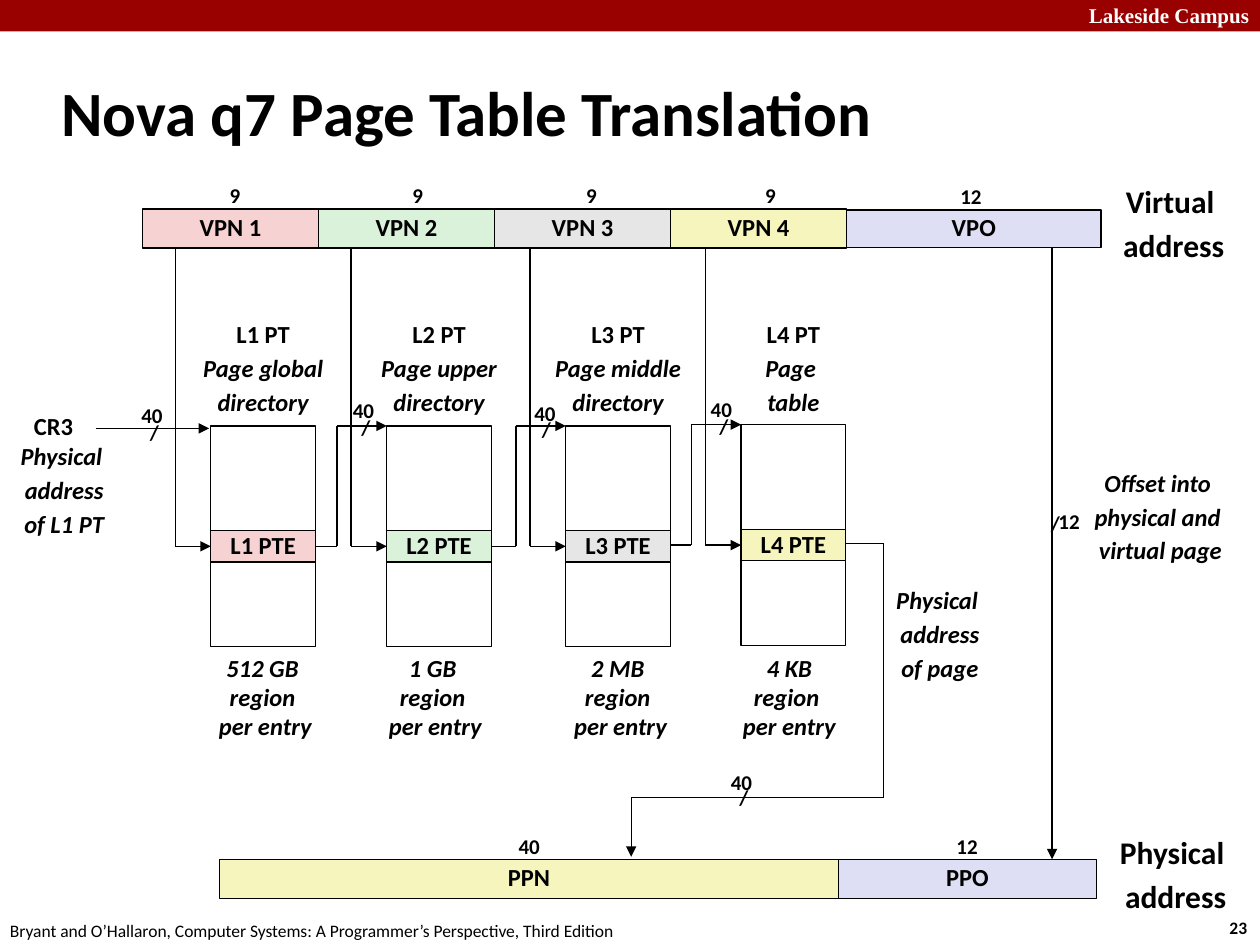
from pptx import Presentation
from pptx.util import Pt
from pptx.dml.color import RGBColor as Rgb
from pptx.enum.shapes import MSO_SHAPE as Kind, MSO_CONNECTOR as Link
from pptx.enum.text import PP_ALIGN as Align, MSO_ANCHOR as Anchor
from pptx.oxml.ns import qn
from lxml.etree import SubElement as Sub

# Content: all lengths in points
HUE = dict(red="990000", pink="F6D2D2", green="DBF2DA", gray="E6E6E6",
           yellow="F6F5BD", blue="DEDFF5", white="FFFFFF", black="000000")
TITLE = "Nova q7 Page Table Translation"
SCHOOL = "Lakeside Campus"
BOOK = ("Bryant and O’Hallaron, Computer Systems: "
        "A Programmer’s Perspective, Third Edition")
PAGE = "23"

# left, top of table, fill, name, size of region, centres of region and 9
LEVELS = [
    (120.5, 243.4, "pink", ["Page global", "directory"], "512 GB ", 151.6, 134.3),
    (221, 243.4, "green", ["Page upper", "directory"], "1 GB ", 248.8, 238.7),
    (323.3, 243.4, "gray", ["Page middle", "directory"], "2 MB ", 354.6, 338),
    (423.5, 242.7, "yellow", ["Page ", "table"], "4 KB", 451.1, 440.3),
]
# left, top, width, height, fill, text
FIELDS = [
    (483.8, 120, 145.4, 21.6, "blue", "VPO"),
    (125.3, 491, 354, 22.3, "yellow", "PPN"),
    (479, 491, 147.6, 22.3, "blue", "PPO"),
]
# centre, top, lines, size, italic
NOTES = [
    (30.6, 233.3, ["CR3"], 14, False),
    (36.7, 250.6, ["Physical ", "address", "of L1 PT"], 14, True),
    (537.1, 332.6, ["Physical ", "address", "of page"], 14, True),
    (663.1, 265.7, ["Offset into ", "physical and ", "virtual page"], 14, True),
    (670.7, 103, ["Virtual ", "address"], 18, False),
    (671.8, 475.2, ["Physical ", "address"], 18, False),
    (554.8, 103, ["12"], 12, False),
    (302.4, 474.5, ["40"], 12, False),
    (552.6, 474.5, ["12"], 12, False),
]
# label and slash: centre, top of each
WIDTHS = [
    ("40", 86.8, 228.2, 88.2, 236.2),
    ("40", 207.7, 225.4, 209.1, 233.3),
    ("40", 311.4, 226.8, 312.2, 234.7),
    ("40", 412.2, 224.6, 413.6, 232.6),
    ("40", 423.7, 437.8, 425.1, 445),
    ("12", 610.9, 288.7, 603, 288),
]
# points of each path, which ends in an arrow
PATHS = [
    [(54.7, 244.8), (119.5, 244.8)],
    [(601.2, 141.8), (601.2, 491)],
    [(483.5, 310.5), (504.7, 310.5), (504.7, 455.8), (360.7, 455.8),
     (360.7, 489.6)],
]
VPN_X, VPN_W = 81.4, 100.6
TAB_W, TAB_H, PTE_H, PTE_DY = 59.8, 126, 18, 59.8

deck = Presentation()
deck.slide_width, deck.slide_height = Pt(720), Pt(540)
slide = deck.slides.add_slide(deck.slide_layouts[6])
parts = slide.shapes


def color(key):
    return Rgb.from_string(HUE[key])


def write(frame, lines, size, ital=False, lead=0.9, align=Align.CENTER,
          hue="black", font="Calibri", bold=True):
    """Fill a frame; each line is a text, or a (text, italic) pair."""
    frame.word_wrap = False
    for i, line in enumerate(lines):
        text, slant = line if isinstance(line, tuple) else (line, ital)
        para = frame.paragraphs[0] if i == 0 else frame.add_paragraph()
        para.alignment, para.line_spacing = align, lead
        para.space_before = Pt(0.3 * size if i and lead < 1 else 0)
        run = para.add_run()
        run.text = text
        face = run.font
        face.name, face.size = font, Pt(size)
        face.bold, face.italic = bold, slant
        face.color.rgb = color(hue)


def label(x, y, w, h, lines, size, **style):
    frame = parts.add_textbox(Pt(x), Pt(y), Pt(w), Pt(h)).text_frame
    write(frame, lines, size, **style)
    return frame


def note(mid, top, lines, size, ital=False, lead=0.9):
    tall = 7.2 + len(lines) * size * 1.1 + (len(lines) - 1) * size * 0.3
    label(mid - 45, top, 90, tall, lines, size, ital=ital, lead=lead)


def box(x, y, w, h, fill, text=None, edge=True):
    shape = parts.add_shape(Kind.RECTANGLE, Pt(x), Pt(y), Pt(w), Pt(h))
    shape.shadow.inherit = False
    shape.fill.solid()
    shape.fill.fore_color.rgb = color(fill)
    if edge:
        shape.line.color.rgb = color("black")
        shape.line.width = Pt(0.75)
    else:
        shape.line.fill.background()
    if text:
        shape.text_frame.vertical_anchor = Anchor.MIDDLE
        write(shape.text_frame, [text], 14)


def trace(points):
    for a, b in zip(points, points[1:]):
        line = parts.add_connector(Link.STRAIGHT, *map(Pt, a + b))
        line.line.color.rgb = color("black")
        line.line.width = Pt(0.75)
        if b == points[-1]:
            Sub(line.line._get_or_add_ln(), qn("a:tailEnd"), type="triangle")
        Sub(line._element.spPr, qn("a:effectLst"))


# Header, title and footer
box(0, 0, 720, 18, "red", edge=False)
label(570, -2.2, 151, 21.6, [SCHOOL], 12, lead=1, align=Align.RIGHT,
      hue="white", font="Times New Roman")
head = label(28.1, 34, 640, 59.8, [TITLE], 36, lead=1, align=Align.LEFT)
head.vertical_anchor = Anchor.MIDDLE
head.word_wrap = True
label(695.5, 520.6, 26.6, 19.4, [PAGE], 10, lead=1, align=Align.LEFT)
label(-1.4, 522, 365.8, 19.4, [BOOK], 10, lead=1, align=Align.LEFT, bold=False)

# Address fields
for field in FIELDS:
    box(*field)

# Page table levels
for i, (x, y, fill, name, size, mid, nine) in enumerate(LEVELS):
    pte = y + PTE_DY
    box(VPN_X + i * VPN_W, 119.5, VPN_W, 22.3, fill, f"VPN {i + 1}")
    box(x, y, TAB_W, TAB_H, "white")
    box(x, pte, TAB_W, PTE_H, fill, f"L{i + 1} PTE")
    drop, row = x - 20.4, pte + PTE_H / 2
    trace([(drop, 141.8), (drop, row), (x, row)])
    if i:
        rise = x - 28.4
        trace([(LEVELS[i - 1][0] + TAB_W, row), (rise, row), (rise, y), (x, y)])
    note(nine, 102.2, ["9"], 12)
    note(x + TAB_W / 2, 180.7,
         [f"L{i + 1} PT"] + [(part, True) for part in name], 14)
    note(mid, 369.4, [size, "region ", "per entry"], 14, True, 1)

# Paths and notes
for points in PATHS:
    trace(points)
for item in NOTES:
    note(*item)
for text, mid, top, cut, cut_top in WIDTHS:
    note(mid, top, [text], 12)
    note(cut, cut_top, ["/"], 12, lead=1)

deck.save("out.pptx")
